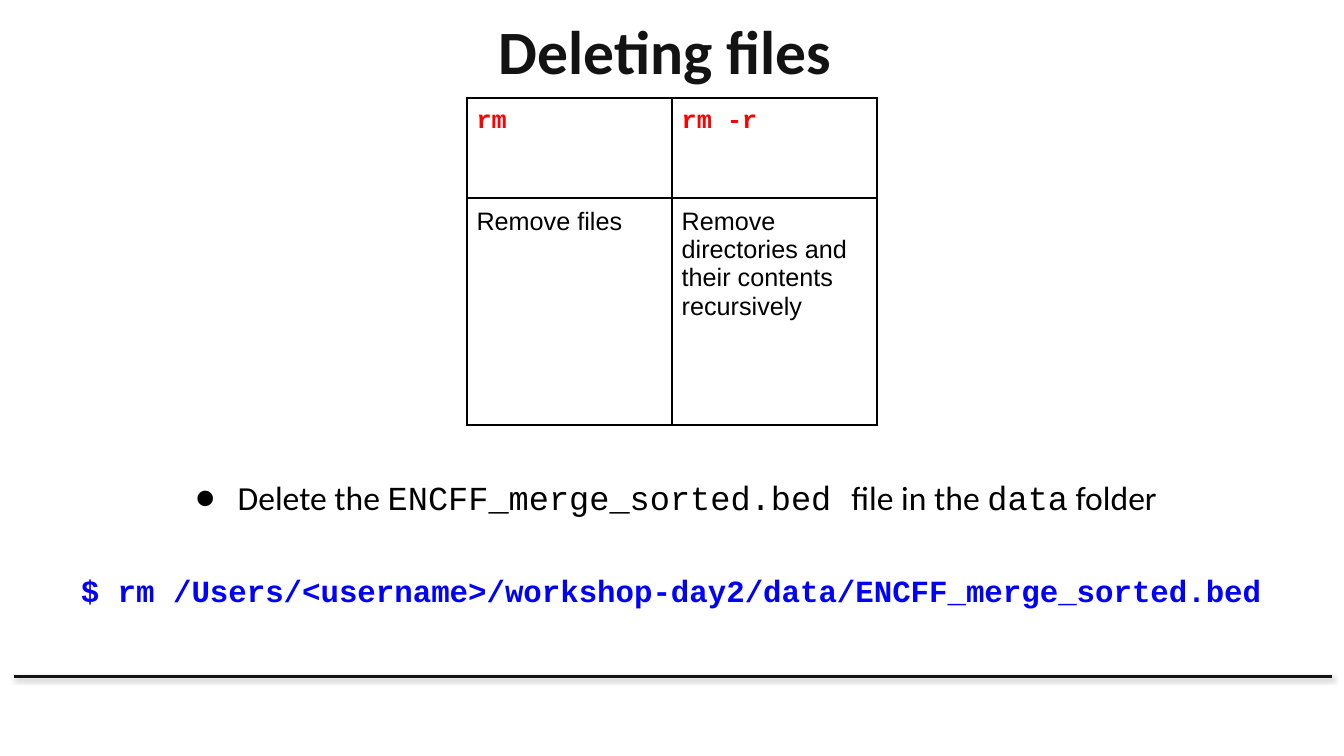
import dataclasses

import lxml.etree
import pptx
import pptx.dml.color
import pptx.enum.shapes
import pptx.enum.text
import pptx.oxml
import pptx.oxml.ns
import pptx.util

Cm = pptx.util.Cm
Pt = pptx.util.Pt
ALIGN = pptx.enum.text.PP_ALIGN
ANCHOR = pptx.enum.text.MSO_ANCHOR


@dataclasses.dataclass(frozen=True)
class Theme:
    ink: str = "141313"
    black: str = "000000"
    white: str = "FFFFFF"
    command: str = "FF0000"
    prompt: str = "0000FF"
    heading_font: str = "Calibri"
    table_font: str = "Arial"
    code_font: str = "Courier New"
    title_size: int = 44
    list_size: int = 24
    prompt_size: int = 22
    table_size: int = 18
    border: float = 1.5
    rule: float = 2


def child(parent, tag, **attributes):
    return lxml.etree.SubElement(parent, pptx.oxml.ns.qn(tag), attributes)


def rgb(color):
    return pptx.dml.color.RGBColor.from_string(color)


class SlideBuilder:
    def __init__(self, slide, theme):
        self.slide = slide
        self.theme = theme
        slide.background.fill.solid()
        slide.background.fill.fore_color.rgb = rgb(theme.white)

    def place(self, shape, left, top, width, height):
        shape.left, shape.top = Cm(left), Cm(top)
        shape.width, shape.height = Cm(width), Cm(height)

    def frame(self, frame, inset, anchor=ANCHOR.TOP):
        frame.word_wrap = True
        frame.auto_size = pptx.enum.text.MSO_AUTO_SIZE.NONE
        frame.vertical_anchor = anchor
        frame.margin_left = frame.margin_right = Cm(0.25)
        frame.margin_top = frame.margin_bottom = Cm(inset)
        para = frame.paragraphs[0]
        para.alignment = ALIGN.CENTER
        para.space_before = Pt(0)
        return para

    def span(self, para, text, font, size, color, bold=False):
        span = para.add_run()
        span.text = text
        span.font.name = font
        span.font.size = Pt(size)
        span.font.bold = bold
        span.font.color.rgb = rgb(color)

    def title(self, text, *bounds):
        box = self.slide.shapes.title
        self.place(box, *bounds)
        para = self.frame(box.text_frame, 0.13, ANCHOR.MIDDLE)
        self.span(para, text, self.theme.heading_font, self.theme.title_size,
                  self.theme.ink, bold=True)

    def bullet(self, spans, *bounds):
        box = self.slide.placeholders[1]
        self.place(box, *bounds)
        para = self.frame(box.text_frame, 0.25)
        properties = para._p.get_or_add_pPr()
        properties.set("marL", str(Cm(1.27)))
        properties.set("indent", str(Cm(-1.07)))
        child(child(properties, "a:buClr"), "a:srgbClr", val=self.theme.black)
        child(properties, "a:buFont", typeface=self.theme.heading_font)
        child(properties, "a:buChar", char="●")
        for text, font in spans:
            self.span(para, text, font, self.theme.list_size, self.theme.black)

    def prompt(self, text, *bounds):
        box = self.slide.shapes.add_textbox(*map(Cm, bounds))
        para = self.frame(box.text_frame, 0.25)
        self.span(para, text, self.theme.code_font, self.theme.prompt_size,
                  self.theme.prompt, bold=True)

    def cell(self, cell, text, is_command):
        theme = self.theme
        cell.margin_left = cell.margin_right = Cm(0.25)
        cell.margin_top = cell.margin_bottom = Cm(0.25)
        properties = cell._tc.get_or_add_tcPr()
        for side in ("a:lnL", "a:lnR", "a:lnT", "a:lnB"):
            edge = child(properties, side, w=str(Pt(theme.border)))
            child(child(edge, "a:solidFill"), "a:srgbClr", val=theme.black)
        cell.fill.background()
        font = theme.code_font if is_command else theme.table_font
        color = theme.command if is_command else theme.black
        self.span(cell.text_frame.paragraphs[0], text, font,
                  theme.table_size, color, bold=is_command)

    def command_table(self, rows, left, top, column_width, row_heights):
        columns = len(rows[0])
        table = self.slide.shapes.add_table(
            len(rows), columns, Cm(left), Cm(top),
            Cm(column_width * columns), Cm(sum(row_heights))).table
        table.first_row = table.horz_banding = False
        for column in table.columns:
            column.width = Cm(column_width)
        for index, (texts, height) in enumerate(zip(rows, row_heights)):
            table.rows[index].height = Cm(height)
            for position, text in enumerate(texts):
                self.cell(table.cell(index, position), text, index == 0)

    def footer_rule(self, left, right, top):
        line = self.slide.shapes.add_connector(
            pptx.enum.shapes.MSO_CONNECTOR.STRAIGHT,
            Cm(left), Cm(top), Cm(right), Cm(top))
        line.line.color.rgb = rgb(self.theme.ink)
        line.line.width = Pt(self.theme.rule)
        effects = child(line._element.spPr, "a:effectLst")
        shadow = child(effects, "a:outerShdw", blurRad=str(Pt(3.1)),
                       dist=str(Pt(1.6)), dir="5400000", rotWithShape="0")
        color = child(shadow, "a:srgbClr", val=self.theme.black)
        child(color, "a:alpha", val="38000")


def main():
    deck = pptx.Presentation()
    deck.slide_width, deck.slide_height = Cm(33.87), Cm(19.05)
    theme = Theme()
    page = SlideBuilder(deck.slides.add_slide(deck.slide_layouts[1]), theme)

    page.footer_rule(0.36, 33.58, 17.04)
    page.title("Deleting files ", 1.7, 0.03, 30.48, 2.44)
    page.command_table(
        [("rm", "rm -r"),
         ("Remove files", "Remove directories and their contents recursively")],
        11.76, 2.46, 5.17, (2.52, 5.72))
    page.bullet(
        [("Delete the ", theme.heading_font),
         ("ENCFF_merge_sorted.bed ", theme.code_font),
         ("file in the ", theme.heading_font),
         ("data", theme.code_font),
         (" folder", theme.heading_font)],
        0.91, 11.76, 32.05, 2.18)
    page.prompt(
        "$ rm /Users/<username>/workshop-day2/data/ENCFF_merge_sorted.bed",
        1.22, 14.15, 31.39, 1.8)
    deck.save("out.pptx")


if __name__ == "__main__":
    main()
